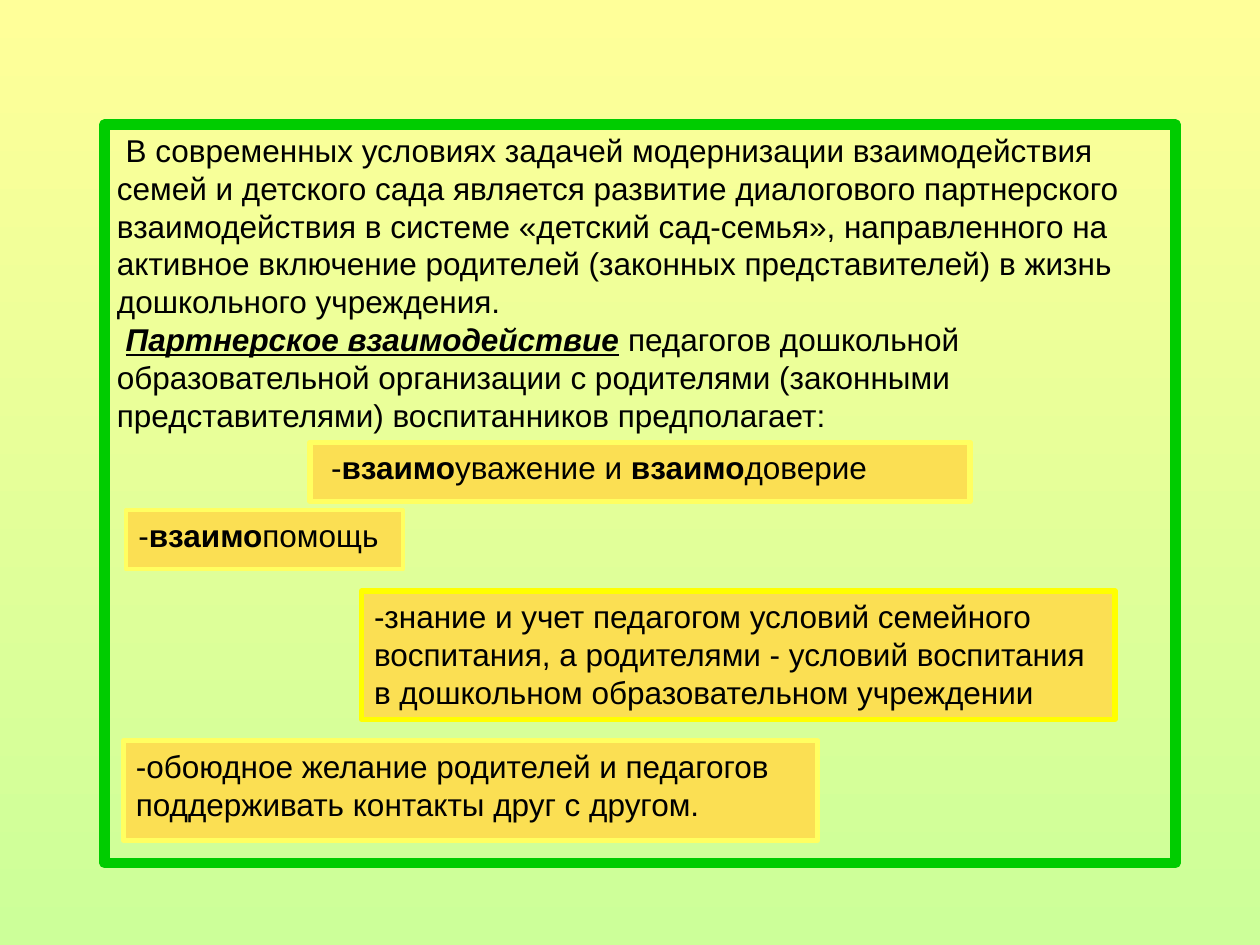
from pptx import Presentation
from pptx.dml.color import RGBColor
from pptx.enum.shapes import MSO_SHAPE as Shape
from pptx.enum.text import MSO_ANCHOR as Anchor, PP_ALIGN as Align
from pptx.util import Inches, Pt

BLACK = RGBColor(0x00, 0x00, 0x00)
GREEN = RGBColor(0x00, 0xCC, 0x00)
AMBER = RGBColor(0xFB, 0xDF, 0x53)
YELLOW = RGBColor(0xFF, 0xFF, 0x00)
PALE_YELLOW = RGBColor(0xFF, 0xFF, 0x61)
SKY_TOP = RGBColor(0xFF, 0xFF, 0x99)
SKY_BOTTOM = RGBColor(0xCC, 0xFF, 0x99)

PLAIN, BOLD, TERM = "plain", "bold", "term"

INTRODUCTION = [
    [(" В современных условиях задачей модернизации взаимодействия семей и детского сада "
      "является развитие диалогового партнерского взаимодействия в системе "
      "«детский сад-семья», направленного на активное включение родителей "
      "(законных представителей) в жизнь дошкольного учреждения.", PLAIN)],
    [(" ", PLAIN), ("Партнерское взаимодействие", TERM),
     (" педагогов дошкольной образовательной организации с родителями "
      "(законными представителями) воспитанников предполагает:", PLAIN)],
]

PRINCIPLES = [
    ((2.46, 3.51, 5.24, 0.47), PALE_YELLOW, 3,
     [(" -", PLAIN), ("взаимо", BOLD), ("уважение и ", PLAIN),
      ("взаимо", BOLD), ("доверие", PLAIN)]),
    ((1, 4.05, 2.2, 0.47), PALE_YELLOW, 2.25,
     [("-", PLAIN), ("взаимо", BOLD), ("помощь", PLAIN)]),
    ((2.87, 4.69, 5.98, 1.02), YELLOW, 3,
     [("-знание и учет педагогом условий семейного воспитания, а родителями - "
       "условий воспитания в дошкольном образовательном учреждении", PLAIN)]),
    ((0.98, 5.88, 5.51, 0.79), PALE_YELLOW, 3,
     [("-обоюдное желание родителей и педагогов поддерживать контакты "
       "друг с другом.", PLAIN)]),
]


def paint_background(slide):
    fill = slide.background.fill
    fill.gradient()
    fill.gradient_angle = 270
    for stop, color, position in zip(fill.gradient_stops, (SKY_TOP, SKY_BOTTOM), (0, 1)):
        stop.color.rgb = color
        stop.position = position


def write_paragraph(paragraph, parts):
    paragraph.alignment = Align.LEFT
    for text, style in parts:
        run = paragraph.add_run()
        run.text = text
        font = run.font
        font.name = "Arial"
        font.size = Pt(18)
        font.color.rgb = BLACK
        font.bold = style in (BOLD, TERM)
        font.italic = font.underline = style == TERM


def add_text_box(slide, box, line_color, line_width, paragraphs):
    shape = slide.shapes.add_shape(Shape.RECTANGLE, *map(Inches, box))
    shape.shadow.inherit = False
    shape.fill.background()
    shape.line.color.rgb = line_color
    shape.line.width = Pt(line_width)
    text_frame = shape.text_frame
    text_frame.word_wrap = True
    text_frame.vertical_anchor = Anchor.TOP
    for index, parts in enumerate(paragraphs):
        paragraph = text_frame.add_paragraph() if index else text_frame.paragraphs[0]
        write_paragraph(paragraph, parts)
    return shape


def add_principle(slide, box, line_color, line_width, parts):
    shape = add_text_box(slide, box, line_color, line_width, [parts])
    shape.fill.solid()
    shape.fill.fore_color.rgb = AMBER


def main():
    presentation = Presentation()
    presentation.slide_width = Inches(10)
    presentation.slide_height = Inches(7.5)
    slide = presentation.slides.add_slide(presentation.slide_layouts[6])
    paint_background(slide)
    add_text_box(slide, (0.83, 0.99, 8.5, 5.86), GREEN, 6, INTRODUCTION)
    for principle in PRINCIPLES:
        add_principle(slide, *principle)
    presentation.save("out.pptx")


if __name__ == "__main__":
    main()
